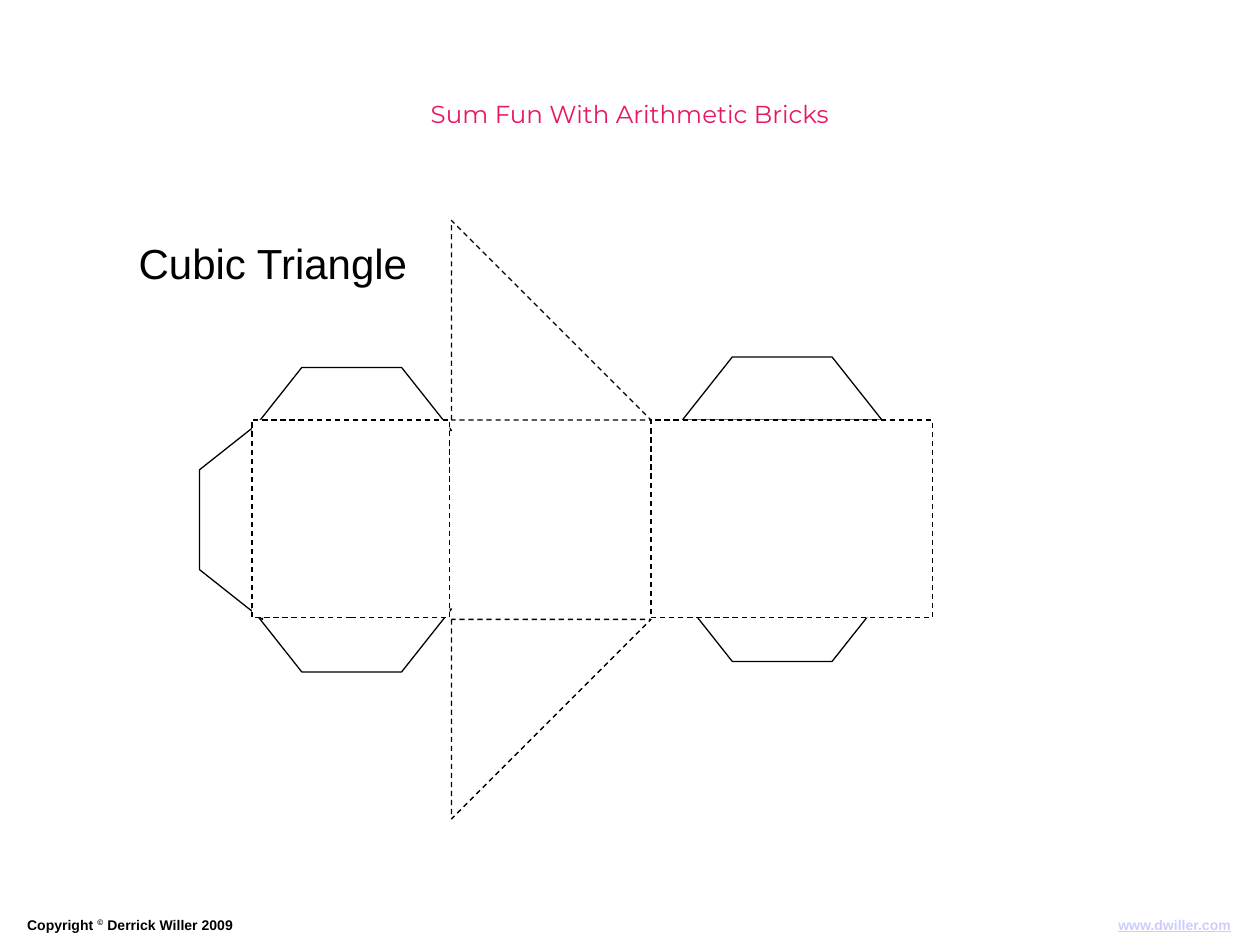
from dataclasses import dataclass

from pptx import Presentation
from pptx import util as u
from pptx.dml.color import RGBColor
from pptx.enum import dml, shapes, text

BLACK = RGBColor(0, 0, 0)
WHITE = RGBColor(255, 255, 255)
PINK = RGBColor(0xE8, 0x17, 0x66)
LAVENDER = RGBColor(0xCC, 0xCC, 0xFF)

# Net measures in points
EDGE = 114       # side of the cube
FACE = 113       # drawn side of a square face
SLOPE = 161      # long side of the triangle
LEFT, TOP = 144, 240
MIDDLE, RIGHT = LEFT + EDGE, LEFT + 2 * EDGE
TAB_DEPTH = 36
TAB_INSET = 28.5


@dataclass
class Tab:
    """A glue tab: start of its base, direction along it, direction outwards."""
    x: float
    y: float
    along: tuple[int, int]
    out: tuple[int, int]


@dataclass
class Panel:
    """A dashed face of the net."""
    kind: shapes.MSO_SHAPE
    x: float
    y: float
    width: float
    height: float
    flipped: bool = False


@dataclass
class Span:
    """A stretch of text with its own font values."""
    words: str
    font: dict
    color: RGBColor = BLACK
    baseline: int = 0


TABS = [
    Tab(390, 342, (1, 0), (0, 1)),
    Tab(390, TOP, (1, 0), (0, -1)),
    Tab(LEFT, 246, (1, 0), (0, -1)),
    Tab(150, TOP, (0, 1), (-1, 0)),
    Tab(LEFT, 348, (1, 0), (0, 1)),
]
TRIANGLE = shapes.MSO_SHAPE.RIGHT_TRIANGLE
RECTANGLE = shapes.MSO_SHAPE.RECTANGLE
PANELS = [
    Panel(RECTANGLE, RIGHT, TOP, SLOPE, FACE),
    Panel(TRIANGLE, MIDDLE, TOP - EDGE, EDGE, EDGE),
    Panel(TRIANGLE, MIDDLE, TOP + EDGE, EDGE, EDGE, flipped=True),
    Panel(RECTANGLE, LEFT, TOP, FACE, FACE),
]


def outline(shape) -> None:
    shape.shadow.inherit = False
    shape.line.color.rgb = BLACK
    shape.line.width = u.Pt(0.75)


def draw_tab(page, tab: Tab) -> None:
    profile = [(0, 0), (TAB_INSET, TAB_DEPTH),
               (EDGE - TAB_INSET, TAB_DEPTH), (EDGE, 0)]
    corners = [(u.Pt(tab.x + a * tab.along[0] + d * tab.out[0]),
                u.Pt(tab.y + a * tab.along[1] + d * tab.out[1]))
               for a, d in profile]
    builder = page.shapes.build_freeform(*corners[0])
    builder.add_line_segments(corners[1:], close=True)
    shape = builder.convert_to_shape()
    shape.fill.background()
    outline(shape)


def draw_panel(page, panel: Panel) -> None:
    shape = page.shapes.add_shape(
        panel.kind, u.Pt(panel.x), u.Pt(panel.y),
        u.Pt(panel.width), u.Pt(panel.height))
    shape.fill.solid()
    shape.fill.fore_color.rgb = WHITE
    outline(shape)
    shape.line.dash_style = dml.MSO_LINE.DASH
    if panel.flipped:
        shape._element.spPr.xfrm.set("flipV", "1")


def write(box, spans: list[Span], align, wrap: bool) -> None:
    frame = box.text_frame
    frame_format = {"word_wrap": wrap, "auto_size": text.MSO_AUTO_SIZE.NONE,
                    "vertical_anchor": text.MSO_ANCHOR.TOP}
    for name, value in frame_format.items():
        setattr(frame, name, value)
    para = frame.paragraphs[0]
    para.alignment = align
    for span in spans:
        run = para.add_run()
        run.text = span.words
        for name, value in span.font.items():
            setattr(run.font, name, value)
        run.font.color.rgb = span.color
        if span.baseline:
            run.font._element.set("baseline", str(span.baseline))


def add_text(page, x: float, y: float, width: float, height: float,
             spans: list[Span], align, wrap: bool = True) -> None:
    box = page.shapes.add_textbox(u.Pt(x), u.Pt(y), u.Pt(width), u.Pt(height))
    write(box, spans, align, wrap)


def main() -> None:
    deck = Presentation()
    deck.slide_width, deck.slide_height = u.Pt(720), u.Pt(540)
    page = deck.slides.add_slide(deck.slide_layouts[5])
    align = text.PP_ALIGN

    # Heading and footer
    heading = {"name": "Montserrat", "size": u.Pt(14)}
    small = {"name": "Arial", "size": u.Pt(8), "bold": True}
    add_text(page, 252, 53.3, 216, 41.8,
             [Span("Sum Fun With Arithmetic Bricks", heading, PINK)],
             align.CENTER, wrap=False)
    add_text(page, 8.4, 520, 407, 17,
             [Span("Copyright ", small), Span("©", small, baseline=30000),
              Span(" Derrick Willer 2009", small)], align.LEFT)
    add_text(page, 614, 520, 96.6, 17,
             [Span("www.dwiller.com", small | {"underline": True}, LAVENDER)],
             align.RIGHT)

    # Title
    title = page.shapes.title
    place = {"left": 72, "top": 132, "width": 169, "height": 36}
    for name, value in place.items():
        setattr(title, name, u.Pt(value))
    write(title, [Span("Cubic Triangle", {"name": "Arial", "size": u.Pt(24)})],
          align.LEFT, wrap=False)

    # Net: tabs lie behind the faces
    for tab in TABS:
        draw_tab(page, tab)
    for panel in PANELS:
        draw_panel(page, panel)

    deck.save("out.pptx")


if __name__ == "__main__":
    main()
